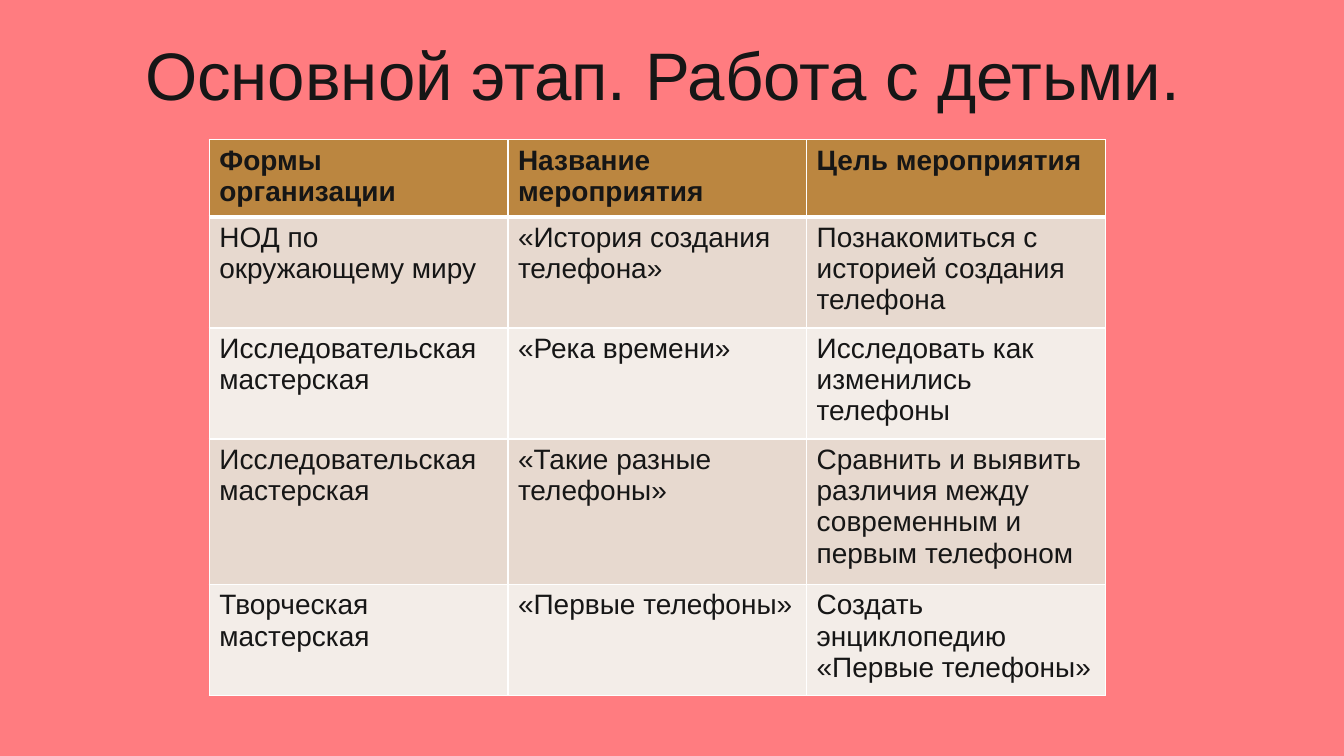
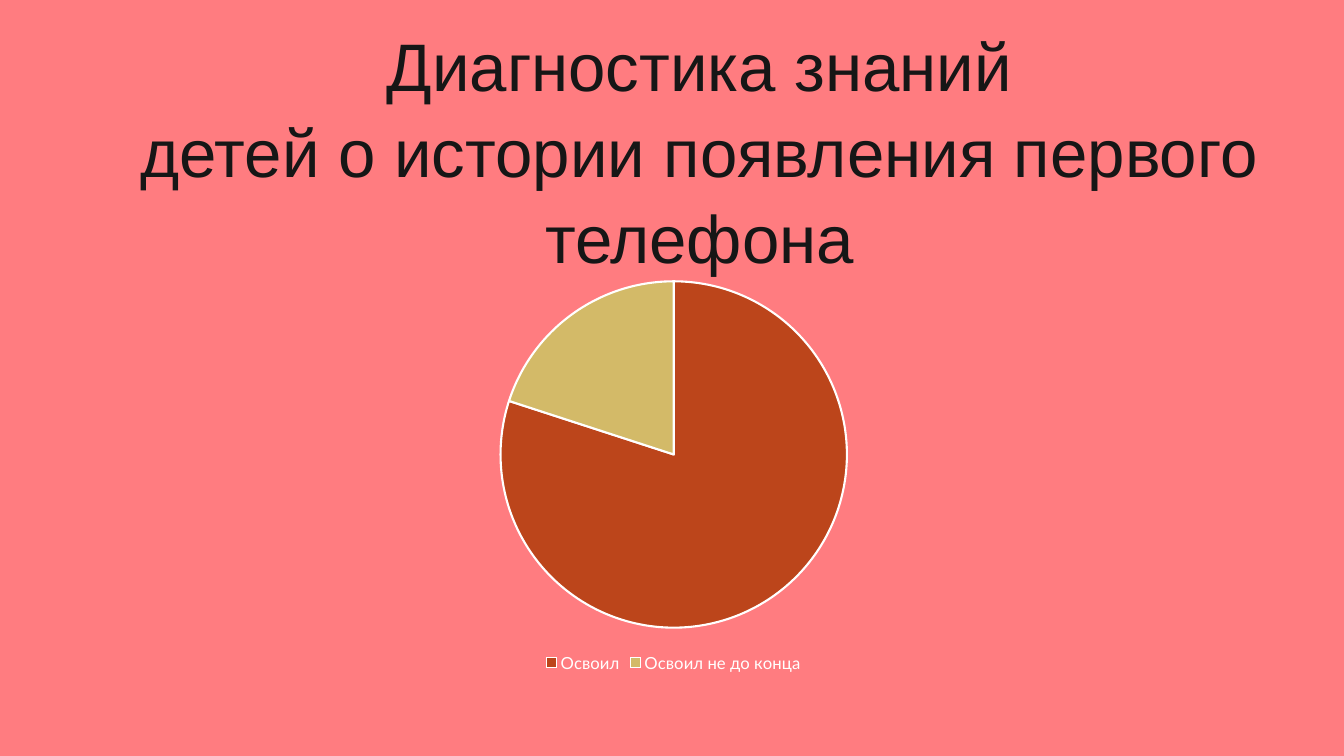
"""Build two slides on a children's project: a plan table and a result pie."""
from dataclasses import dataclass

from lxml import etree
from pptx import Presentation
from pptx.chart.data import CategoryChartData
from pptx.dml.color import RGBColor
from pptx.enum import chart as ch, text as tx
from pptx.oxml import ns
from pptx.util import Pt

INK = {
    "back": "FF7C80", "text": "161616", "white": "FFFFFF",
    "head": "BB8640", "dark": "E7D9CF", "light": "F3EDE8",
    "full": "BC451B", "part": "D3BA68",
}
FACE = "Arial"


@dataclass
class Box:
    left: float
    top: float
    width: float
    height: float

    def place(self) -> list:
        return [Pt(v) for v in (self.left, self.top, self.width, self.height)]


@dataclass
class Title:
    box: Box
    lines: list[str]
    align: tx.PP_ALIGN


@dataclass
class Row:
    height: float
    cells: tuple[str, str, str]


@dataclass
class Slice:
    label: str
    value: int
    ink: str


TITLES = [
    Title(Box(96.5, 16, 818, 65.5), ["Основной этап. Работа с детьми."],
          tx.PP_ALIGN.LEFT),
    Title(Box(72, 9.5, 855.5, 181.5),
          ["Диагностика знаний", "детей о истории появления первого телефона"],
          tx.PP_ALIGN.CENTER),
]
GRID = Box(149.5, 99.75, 640, 396)
ROWS = [
    Row(55, ("Формы организации", "Название мероприятия", "Цель мероприятия")),
    Row(79, ("НОД по окружающему миру", "«История создания телефона»",
             "Познакомиться с историей создания телефона")),
    Row(79, ("Исследовательская мастерская", "«Река времени»",
             "Исследовать как изменились телефоны")),
    Row(104, ("Исследовательская мастерская", "«Такие разные телефоны»",
              "Сравнить и выявить различия между современным и первым телефоном")),
    Row(79, ("Творческая мастерская", "«Первые телефоны»",
             "Создать энциклопедию «Первые телефоны»")),
]
PIE = Box(280, 191, 402.5, 292.5)
SLICES = [Slice("Освоил", 80, "full"), Slice("Освоил не до конца", 20, "part")]


def rgb(name: str) -> RGBColor:
    return RGBColor.from_string(INK[name])


def style(font, size: float, ink: str = "text", face: str = FACE,
          bold: bool = False) -> None:
    font.name, font.size, font.bold = face, Pt(size), bold
    font.color.rgb = rgb(ink)


def paint(fill, ink: str) -> None:
    fill.solid()
    fill.fore_color.rgb = rgb(ink)


def add_title(slide, title: Title) -> None:
    frame = slide.shapes.add_textbox(*title.box.place()).text_frame
    frame.word_wrap = True
    frame.auto_size = tx.MSO_AUTO_SIZE.SHAPE_TO_FIT_TEXT
    frame.text = "\n".join(title.lines)
    for par in frame.paragraphs:
        par.alignment = title.align
        par.line_spacing = 1.07
        style(par.font, 48)


def edge(cell, top: float, base: float) -> None:
    props = cell._tc.get_or_add_tcPr()
    for side, width in (("L", 1), ("R", 1), ("T", top), ("B", base)):
        line = etree.SubElement(props, ns.qn(f"a:ln{side}"), w=str(Pt(width)))
        fill = etree.SubElement(line, ns.qn("a:solidFill"))
        etree.SubElement(fill, ns.qn("a:srgbClr"), val=INK["white"])


def add_grid(slide, box: Box, rows: list[Row]) -> None:
    count = len(rows[0].cells)
    table = slide.shapes.add_table(len(rows), count, *box.place()).table
    for col in table.columns:
        col.width = Pt(round(box.width / count, 2))
    for i, row in enumerate(rows):
        table.rows[i].height = Pt(row.height)
        ink = "head" if i == 0 else ("light", "dark")[i % 2]
        for j, words in enumerate(row.cells):
            cell = table.cell(i, j)
            cell.text = words
            style(cell.text_frame.paragraphs[0].font, 20, bold=i == 0)
            edge(cell, 3 if i == 1 else 1, 3 if i == 0 else 1)
            paint(cell.fill, ink)


def add_pie(slide, box: Box, slices: list[Slice]) -> None:
    data = CategoryChartData()
    data.categories = [part.label for part in slices]
    data.add_series("Series 1", [part.value for part in slices])
    chart = slide.shapes.add_chart(ch.XL_CHART_TYPE.PIE, *box.place(), data).chart
    style(chart.font, 10, "white", "Lato")
    chart.has_title = False
    chart.has_legend = True
    chart.legend.position = ch.XL_LEGEND_POSITION.BOTTOM
    chart.legend.include_in_layout = False
    style(chart.legend.font, 11.9, "white", "Lato")
    plot = chart.plots[0]
    plot.vary_by_categories = True
    for i, part in enumerate(slices):
        shape = plot.series[0].points[i].format
        paint(shape.fill, part.ink)
        paint(shape.line.fill, "white")
        shape.line.width = Pt(1.5)


def main() -> None:
    deck = Presentation()
    deck.slide_width, deck.slide_height = Pt(960), Pt(540)
    paint(deck.slide_master.background.fill, "back")
    plan, result = (deck.slides.add_slide(deck.slide_layouts[6]) for _ in TITLES)
    for slide, title in zip((plan, result), TITLES):
        add_title(slide, title)
    add_grid(plan, GRID, ROWS)
    add_pie(result, PIE, SLICES)
    deck.save("out.pptx")


if __name__ == "__main__":
    main()
